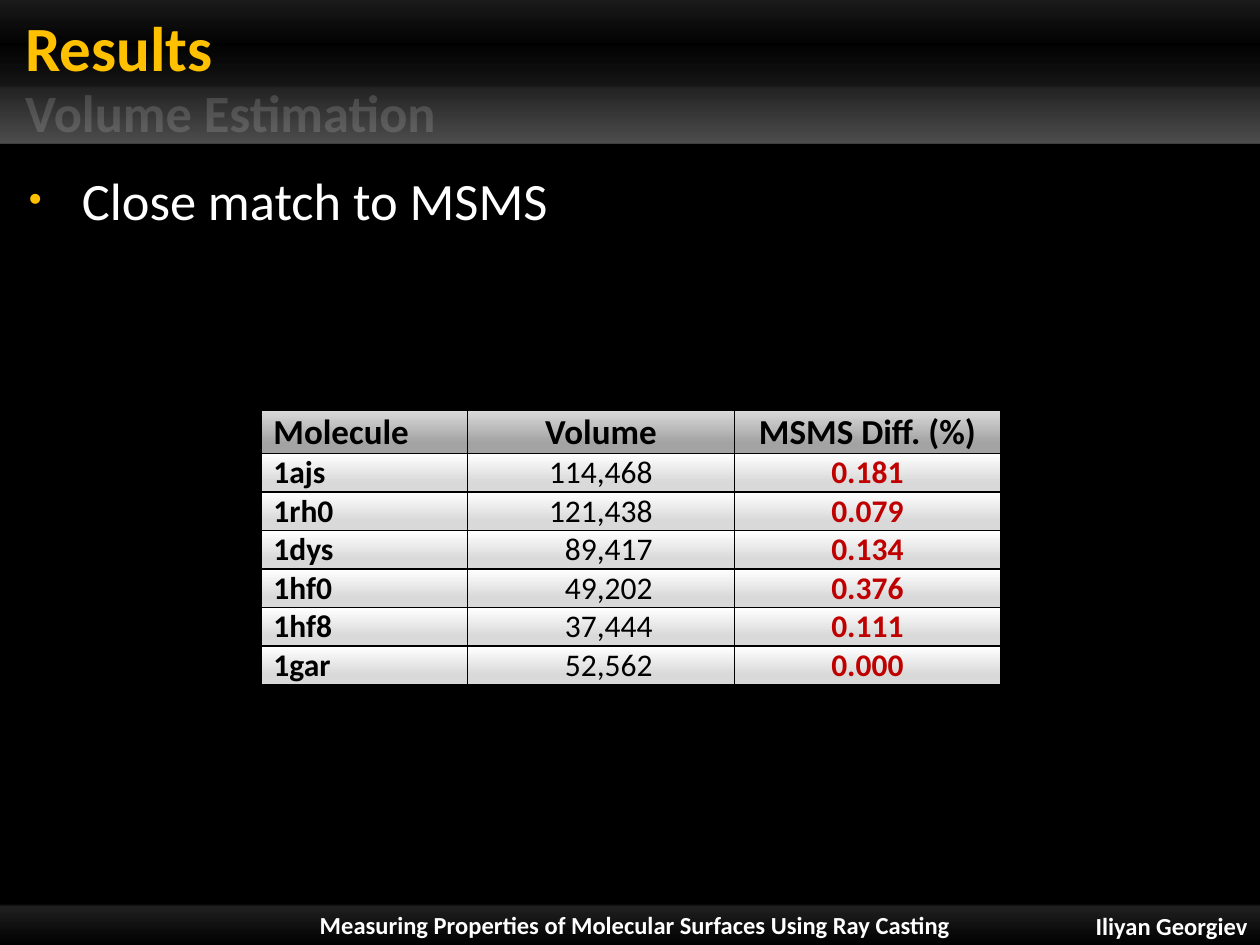
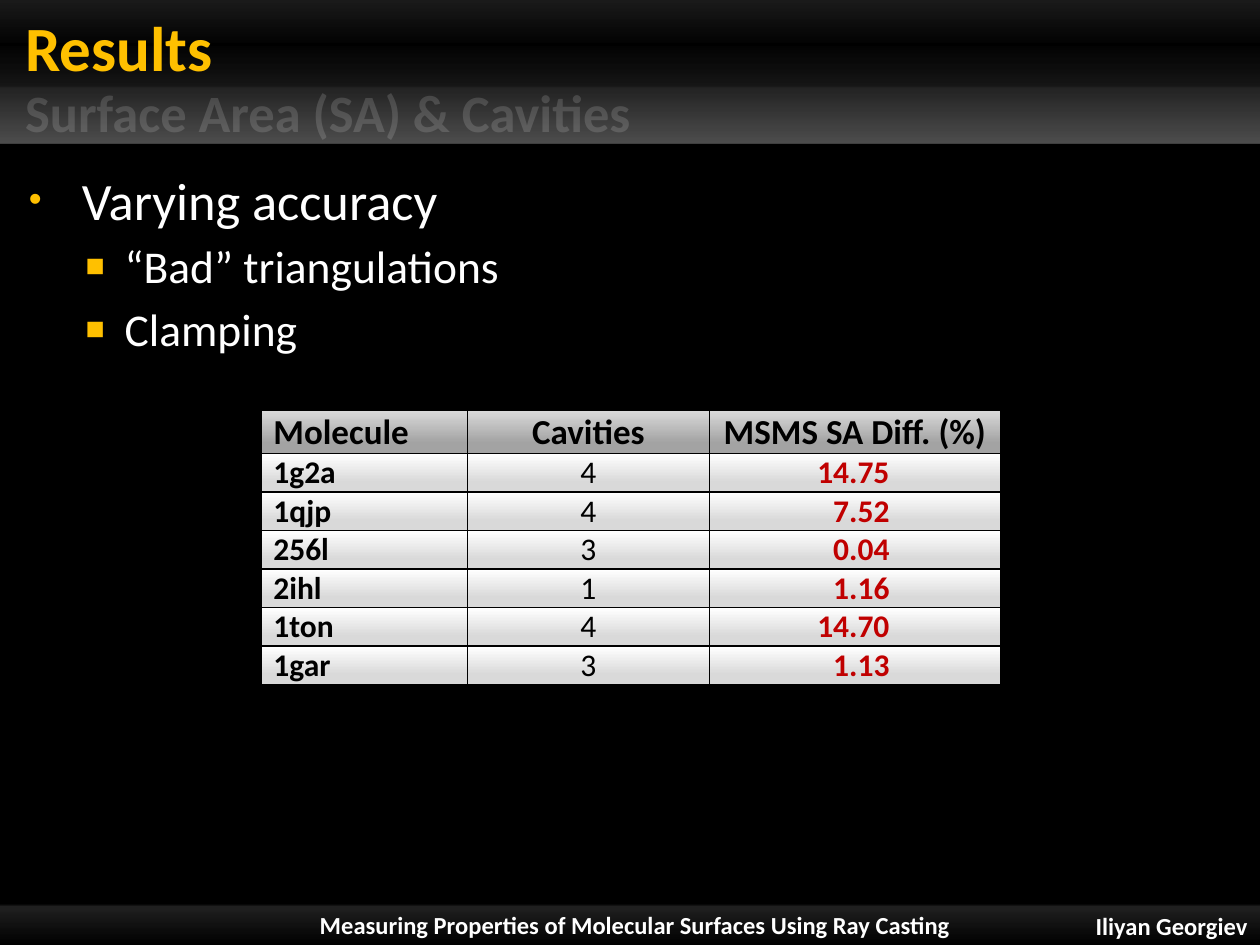
from dataclasses import dataclass

from lxml import etree
from pptx import Presentation
from pptx import util as u
from pptx.dml.color import RGBColor
from pptx.enum import shapes, text
from pptx.oxml import ns

UNIT = u.Inches(0.1)
COLUMNS, ROWS = 100, 75
FONT = "Calibri"
BLACK = RGBColor(0x00, 0x00, 0x00)
WHITE = RGBColor(0xFF, 0xFF, 0xFF)
GOLD = RGBColor(0xFF, 0xC0, 0x00)
RED = RGBColor(0xC0, 0x00, 0x00)
SILVER = RGBColor(0xD9, 0xD9, 0xD9)
STEEL = RGBColor(0xA3, 0xA3, 0xA3)

HEADER_FADE = [(0, WHITE, 10), (31, WHITE, 0), (60, WHITE, 8), (61, WHITE, 13), (100, WHITE, 30)]
FOOTER_FADE = [(5, WHITE, 0), (10, WHITE, 8), (11, WHITE, 13), (100, WHITE, 0)]
SUBTITLE_FADE = [(0, WHITE, 15), (75, WHITE, 100)]
HEAD_ROW_FADE = [(0, SILVER, 100), (75, STEEL, 100)]
BODY_ROW_FADE = [(0, WHITE, 100), (75, SILVER, 100)]

LEFT, CENTER, RIGHT = text.PP_ALIGN.LEFT, text.PP_ALIGN.CENTER, text.PP_ALIGN.RIGHT
TOP, MIDDLE, BOTTOM = text.MSO_ANCHOR.TOP, text.MSO_ANCHOR.MIDDLE, text.MSO_ANCHOR.BOTTOM


@dataclass
class Box:
    """A region measured in grid columns and rows."""
    left: float
    top: float
    width: float
    height: float

    def inside(self, left, top, width, height):
        """Return a box placed relative to this one."""
        return Box(self.left + left, self.top + top, width, height)

    def lengths(self):
        """Return left, top, width and height as slide lengths."""
        return [int(round(side * UNIT)) for side in (self.left, self.top, self.width, self.height)]


SLIDE = Box(0, 0, COLUMNS, ROWS)
HEADER = SLIDE.inside(0, 0, COLUMNS, 11.4)
CONTENT = SLIDE.inside(0, 11.5, COLUMNS, 60.2)
FOOTER = SLIDE.inside(0, 71.6, COLUMNS, 3.4)


def add_element(parent, tag, **attributes):
    """Append a drawing element with its attributes."""
    values = {name: str(value) for name, value in attributes.items()}
    return etree.SubElement(parent, ns.qn(tag), values)


def paint_fade(fill, holder, stops):
    """Fill a shape, cell or span with a vertical gradient."""
    fill.background()
    blank = holder.find(ns.qn("a:noFill"))
    fade = etree.Element(ns.qn("a:gradFill"), rotWithShape="1")
    stop_list = add_element(fade, "a:gsLst")
    for place, color, opacity in stops:
        stop = add_element(stop_list, "a:gs", pos=place * 1000)
        tint = add_element(stop, "a:srgbClr", val=color)
        if opacity < 100:
            add_element(tint, "a:alpha", val=opacity * 1000)
    add_element(fade, "a:lin", ang=5400000, scaled=0)
    holder.replace(blank, fade)


def write(para, words, size=14, color=WHITE, bold=False, align=LEFT, fade=None):
    """Write one formatted span into a paragraph."""
    para.alignment = align
    span = para.add_run()
    span.text = words
    font = span.font
    font.name, font.size, font.bold = FONT, u.Pt(size), bold
    if fade:
        paint_fade(font.fill, span._r.get_or_add_rPr(), fade)
    else:
        font.color.rgb = color


def format_frame(frame, anchor=MIDDLE, margins=(1, 0.5, 1, 0.5)):
    """Set wrapping, anchor and margins, and return the first paragraph."""
    frame.word_wrap = True
    frame.auto_size = text.MSO_AUTO_SIZE.NONE
    frame.vertical_anchor = anchor
    sides = [int(margin * UNIT) for margin in margins]
    frame.margin_left, frame.margin_top, frame.margin_right, frame.margin_bottom = sides
    return frame.paragraphs[0]


def add_text_frame(page, box, **layout):
    """Add a text box and return its frame."""
    frame = page.shapes.add_textbox(*box.lengths()).text_frame
    format_frame(frame, **layout)
    return frame


def add_band(page, box, fade):
    """Add a full-width translucent band."""
    band = page.shapes.add_shape(shapes.MSO_SHAPE.RECTANGLE, *box.lengths())
    band.shadow.inherit = False
    band.line.fill.background()
    paint_fade(band.fill, band._element.spPr, fade)


def add_header(page, box, title, subtitle):
    """Place the band, title and faded subtitle."""
    add_band(page, box, HEADER_FADE)
    heading = page.shapes.title
    page.shapes._spTree.append(heading._element)
    heading.left, heading.top, heading.width, heading.height = box.inside(0, 0, 66, 6.7).lengths()
    para = format_frame(heading.text_frame, anchor=BOTTOM, margins=(2, 0, 1, 0))
    write(para, title, size=36, color=GOLD, bold=True)
    frame = add_text_frame(page, box.inside(0, 6.5, 67.1, 4.7), margins=(2, 0, 1, 0))
    write(frame.paragraphs[0], subtitle, size=30, bold=True, fade=SUBTITLE_FADE)


def add_footer(page, box):
    """Place the footer band, author and talk title."""
    add_band(page, box, FOOTER_FADE)
    author = add_text_frame(page, box.inside(81.5, 0.3, 18.5, 3.1))
    write(author.paragraphs[0], "Iliyan Georgiev", bold=True, align=RIGHT)
    talk = add_text_frame(page, box.inside(14, 0.1, 72.8, 3.4))
    write(talk.paragraphs[0], "Measuring Properties of Molecular Surfaces Using Ray Casting",
          bold=True, align=CENTER)


def add_bullet(para, mark, margin, hang):
    """Give a paragraph a gold bullet and a hanging indent."""
    settings = para._p.get_or_add_pPr()
    settings.set("marL", str(u.Inches(margin)))
    settings.set("indent", str(-u.Inches(hang)))
    add_element(add_element(settings, "a:buClr"), "a:srgbClr", val=GOLD)
    add_element(settings, "a:buSzPct", val=70000)
    add_element(settings, "a:buFont", typeface="Arial")
    add_element(settings, "a:buChar", char=mark)


def add_points(page, box, point, details):
    """Place the main point and its details."""
    frame = add_text_frame(page, box, anchor=TOP, margins=(1.6, 1.8, 1, 0.5))
    para = frame.paragraphs[0]
    add_bullet(para, "•", 0.49, 0.42)
    write(para, point, size=30)
    for detail in details:
        para = frame.add_paragraph()
        para.level = 1
        add_bullet(para, "■", 0.83, 0.31)
        para.space_before = u.Pt(4.5)
        write(para, detail, size=26)


def add_borders(cell):
    """Draw a thin black line on every side of a cell."""
    settings = cell._tc.get_or_add_tcPr()
    for place, side in enumerate(("a:lnL", "a:lnR", "a:lnT", "a:lnB")):
        line = etree.Element(ns.qn(side), w=str(u.Pt(1)))
        add_element(add_element(line, "a:solidFill"), "a:srgbClr", val=BLACK)
        settings.insert(place, line)


def format_cell(cell, words, fade, right_margin=1, **style):
    """Fill, frame and write one table cell."""
    paint_fade(cell.fill, cell._tc.get_or_add_tcPr(), fade)
    add_borders(cell)
    cell.margin_left, cell.margin_right = UNIT, int(right_margin * UNIT)
    cell.margin_top = cell.margin_bottom = 0
    write(cell.text_frame.paragraphs[0], words, **style)


def add_results(page, box, widths, heads, records, right_margins):
    """Place the results table; a right margin aligns that column's figures."""
    table = page.shapes.add_table(len(records) + 1, len(heads), *box.lengths()).table
    for column, width in zip(table.columns, widths):
        column.width = int(width * UNIT)
    for index, row in enumerate(table.rows):
        row.height = int((3.05 if index else 3.4) * UNIT)
    colors = (BLACK, BLACK, RED)
    for column, head in enumerate(heads):
        format_cell(table.cell(0, column), head, HEAD_ROW_FADE, size=20, color=BLACK,
                    bold=True, align=CENTER if column else LEFT)
        margin = right_margins.get(column)
        align = RIGHT if margin else CENTER if column else LEFT
        for row, record in enumerate(records, 1):
            format_cell(table.cell(row, column), record[column], BODY_ROW_FADE,
                        right_margin=margin or 1, size=18, color=colors[column],
                        bold=column != 1, align=align)


def add_results_page(deck, subtitle, point, details, **results):
    """Build one results slide."""
    page = deck.slides.add_slide(deck.slide_layouts[5])
    page.background.fill.solid()
    page.background.fill.fore_color.rgb = BLACK
    add_header(page, HEADER, "Results", subtitle)
    add_footer(page, FOOTER)
    add_points(page, CONTENT, point, details)
    add_results(page, CONTENT.inside(20.7, 21.1, 58.7, 21.7), **results)


def main():
    """Build and save the deck."""
    deck = Presentation()
    deck.slide_width, deck.slide_height = COLUMNS * UNIT, ROWS * UNIT
    add_results_page(
        deck, "Volume Estimation", "Close match to MSMS", [],
        widths=(16.4, 21.2, 21.1),
        heads=("Molecule", "Volume", "MSMS Diff. (%)"),
        records=[
            ("1ajs", "114,468", "0.181"),
            ("1rh0", "121,438", "0.079"),
            ("1dys", "89,417", "0.134"),
            ("1hf0", "49,202", "0.376"),
            ("1hf8", "37,444", "0.111"),
            ("1gar", "52,562", "0.000"),
        ],
        right_margins={1: 6.5})
    add_results_page(
        deck, "Surface Area (SA) & Cavities", "Varying accuracy",
        ["“Bad” triangulations", "Clamping"],
        widths=(16.4, 19.2, 23.1),
        heads=("Molecule", "Cavities", "MSMS SA Diff. (%)"),
        records=[
            ("1g2a", "4", "14.75"),
            ("1qjp", "4", "7.52"),
            ("256l", "3", "0.04"),
            ("2ihl", "1", "1.16"),
            ("1ton", "4", "14.70"),
            ("1gar", "3", "1.13"),
        ],
        right_margins={2: 8.8})
    deck.save("out.pptx")


if __name__ == "__main__":
    main()
